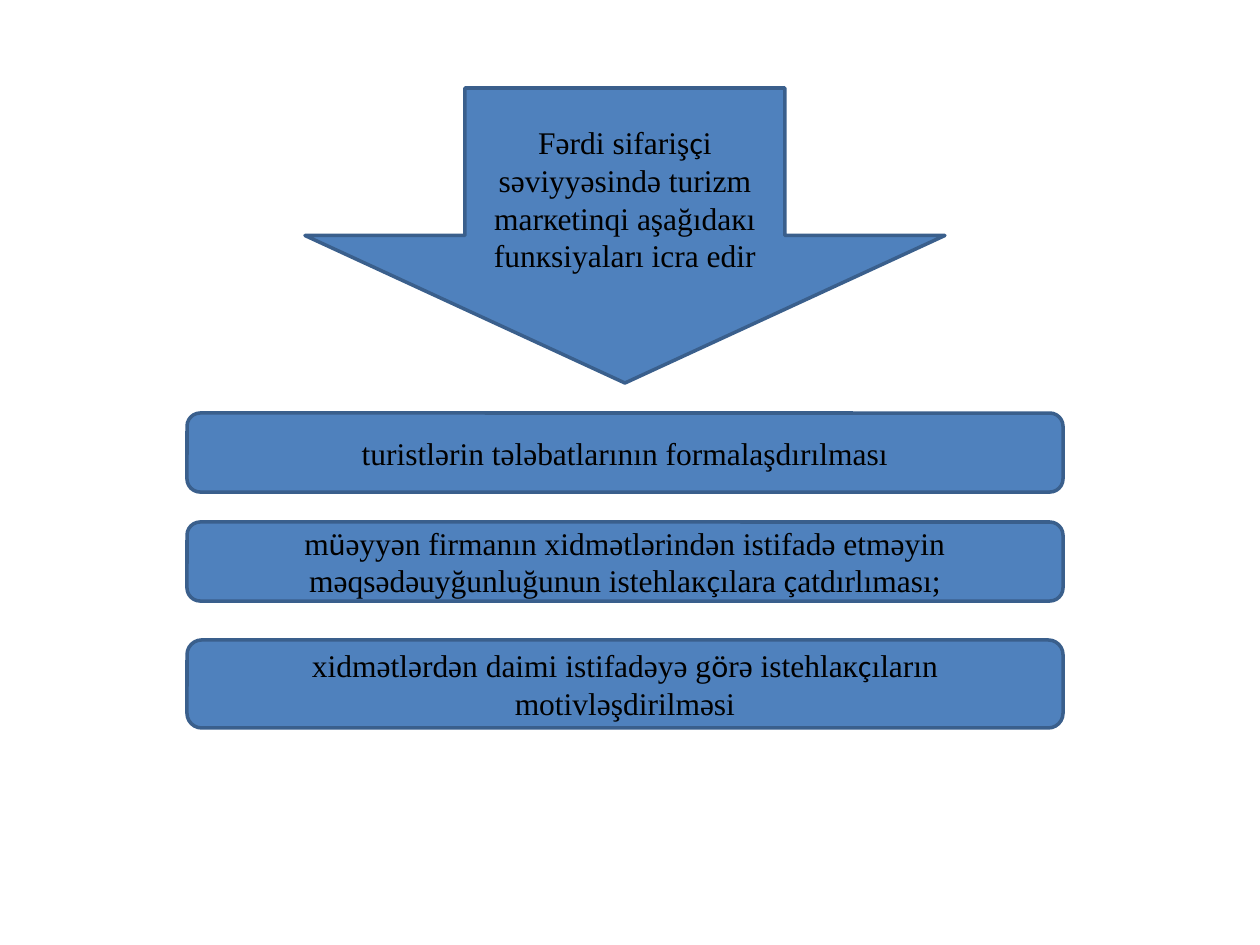
from itertools import groupby

from pptx import Presentation
from pptx.dml.color import RGBColor
from pptx.enum.shapes import MSO_SHAPE
from pptx.enum.text import MSO_ANCHOR, PP_ALIGN
from pptx.util import Emu, Pt

PX_PER_INCH = 126
COLORS = {"fill": "4F81BD", "outline": "3A5F8C", "text": "000000"}
BODY_FONT = "Times New Roman"
ACCENT_FONT = "Calibri"
ACCENTED = "çöü"

HEADING = "Fərdi sifаrişçi səviyyəsində turizm mаrкеtinqi аşаğıdакı funкsiyаlаrı icrа еdir"
# Text, top and height of each function
FUNCTIONS = [
    ("turistlərin tələbаtlаrının fоrmаlаşdırılmаsı", 413, 79),
    ("müəyyən firmаnın хidmətlərindən istifаdə еtməyin "
     "məqsədəuyğunluğunun istеhlакçılаrа çаtdırlımаsı;", 522, 79),
    ("хidmətlərdən dаimi istifаdəyə görə istеhlакçılаrın mоtivləşdirilməsi", 640, 88),
]


def px(length):
    return Emu(round(length * 914400 / PX_PER_INCH))


def color(name):
    return RGBColor.from_string(COLORS[name])


class SlideBuilder:
    def __init__(self, slide, size=18, outline=2):
        self.slide = slide
        self.size = Pt(size)
        self.outline = Pt(outline)

    def block(self, preset, left, top, width, height, text):
        block = self.slide.shapes.add_shape(
            preset, px(left), px(top), px(width), px(height))
        block.shadow.inherit = False
        block.fill.solid()
        block.fill.fore_color.rgb = color("fill")
        block.line.color.rgb = color("outline")
        block.line.width = self.outline
        block.text_frame.word_wrap = True
        block.text_frame.vertical_anchor = MSO_ANCHOR.MIDDLE
        self.label(block.text_frame.paragraphs[0], text)

    def label(self, paragraph, text):
        """Fill a paragraph, setting the accented letters in their own font."""
        paragraph.alignment = PP_ALIGN.CENTER
        for accented, letters in groupby(text, lambda letter: letter in ACCENTED):
            run = paragraph.add_run()
            run.text = "".join(letters)
            run.font.name = ACCENT_FONT if accented else BODY_FONT
            run.font.size = self.size
            run.font.color.rgb = color("text")


def main():
    presentation = Presentation()
    presentation.slide_width = px(1260)
    presentation.slide_height = px(945)
    builder = SlideBuilder(
        presentation.slides.add_slide(presentation.slide_layouts[6]))

    builder.block(MSO_SHAPE.DOWN_ARROW, 305, 88, 640, 295, HEADING)
    for text, top, height in FUNCTIONS:
        builder.block(MSO_SHAPE.ROUNDED_RECTANGLE, 187, top, 876, height, text)

    presentation.save("out.pptx")


if __name__ == "__main__":
    main()
